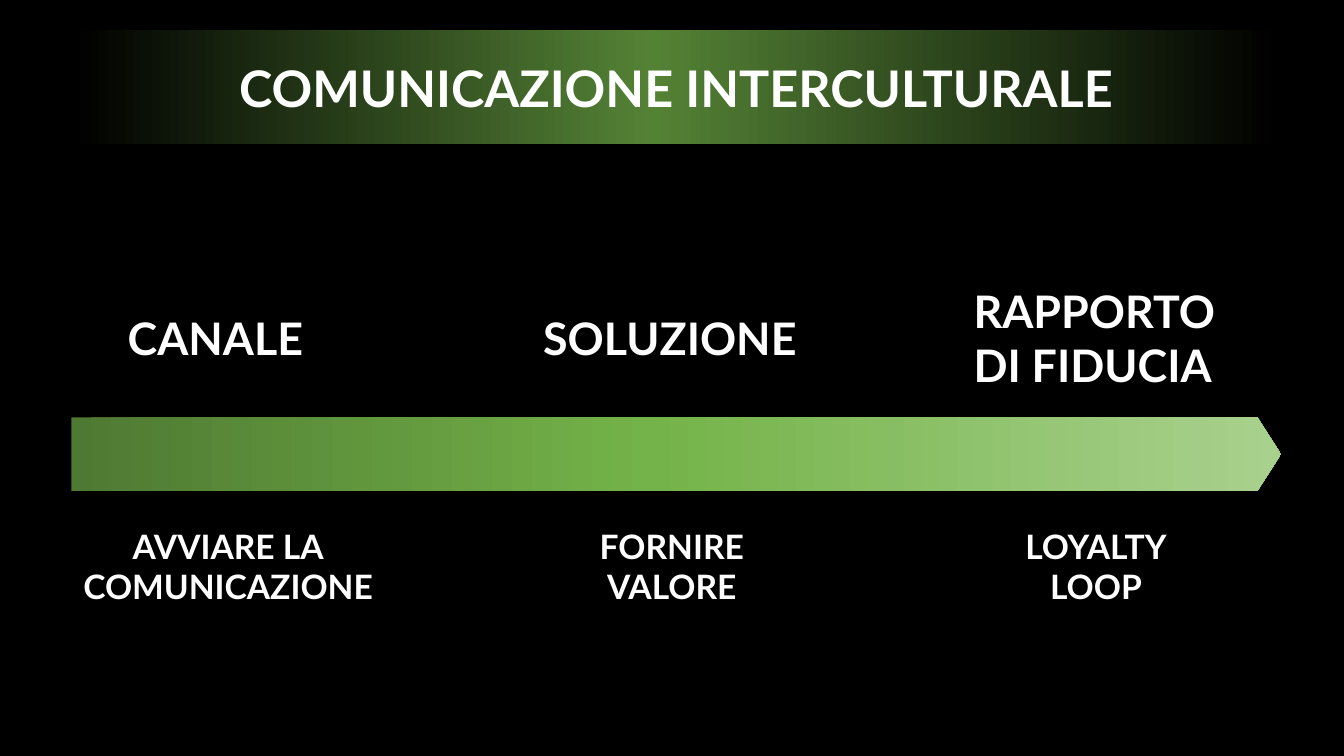
from copy import deepcopy

from pptx import Presentation
from pptx.dml.color import RGBColor
from pptx.enum.shapes import MSO_SHAPE as Preset
from pptx.enum.text import MSO_ANCHOR as Anchor, MSO_AUTO_SIZE as AutoSize, PP_ALIGN as Align
from pptx.oxml.ns import qn
from pptx.util import Cm, Pt

# Content: each text has its lines, centre and width in cm
TITLE = ["COMUNICAZIONE INTERCULTURALE"]
STAGES = [
    (["CANALE"], 5.46, 4.98),
    (["SOLUZIONE"], 16.93, 6.98),
    (["RAPPORTO", "DI FIDUCIA"], 27.64, 6.71),
]
GOALS = [
    (["AVVIARE LA", "COMUNICAZIONE"], 5.75, 7.9),
    (["FORNIRE", "VALORE"], 16.93, 4.19),
    (["LOYALTY", "LOOP"], 27.62, 4.29),
]
BANNER_STOPS = [(0, "000000"), (0.48, "548235"), (1, "000000")]
ARROW_STOPS = [(0, "4E7932"), (0.48, "74B349"), (1, "A9D18E")]

# Layout in cm
LEFT, WIDTH = 1.8, 30.48
BANNER_TOP, BANNER_HEIGHT = 0.76, 2.87
ARROW_TOP, ARROW_HEIGHT = 10.52, 1.85
STAGE_MIDDLE, STAGE_LINE = 8.53, 1.37
GOAL_TOP, GOAL_HEIGHT = 13.13, 2.31
PADDING = 0.26


def color(value):
    return RGBColor.from_string(value)


def write(frame, lines, *, size, align=Align.LEFT, anchor=Anchor.TOP, wrap=False):
    frame.word_wrap = wrap
    frame.vertical_anchor = anchor
    for i, line in enumerate(lines):
        paragraph = frame.paragraphs[0] if i == 0 else frame.add_paragraph()
        paragraph.alignment = align
        run = paragraph.add_run()
        run.text = line
        run.font.name = "Lato"
        run.font.size = Pt(size)
        run.font.bold = True
        run.font.color.rgb = color("FFFFFF")


def add_label(lines, center, width, top, height, **text_format):
    label = slide.shapes.add_textbox(Cm(center - width / 2), Cm(top), Cm(width), Cm(height))
    write(label.text_frame, lines, **text_format)
    label.text_frame.auto_size = AutoSize.SHAPE_TO_FIT_TEXT


def add_band(preset, top, height, stops):
    band = slide.shapes.add_shape(preset, Cm(LEFT), Cm(top), Cm(WIDTH), Cm(height))
    band.shadow.inherit = False
    band.line.fill.background()
    band.fill.gradient()
    band.fill.gradient_angle = 0
    # The default gradient has two stops; add the third
    stop_list = band.element.spPr.find(qn("a:gradFill")).find(qn("a:gsLst"))
    stop_list.append(deepcopy(stop_list[-1]))
    for stop, (position, value) in zip(band.fill.gradient_stops, stops):
        stop.position = position
        stop.color.rgb = color(value)
    return band


prs = Presentation()
prs.slide_width, prs.slide_height = Cm(33.87), Cm(19.05)
slide = prs.slides.add_slide(prs.slide_layouts[6])
slide.background.fill.solid()
slide.background.fill.fore_color.rgb = color("000000")

# Timeline arrow
arrow = add_band(Preset.PENTAGON, ARROW_TOP, ARROW_HEIGHT, ARROW_STOPS)
arrow.adjustments[0] = 0.32

# Stages above the arrow, centred on one line
for lines, center, width in STAGES:
    height = len(lines) * STAGE_LINE + PADDING
    add_label(lines, center, width, STAGE_MIDDLE - height / 2, height, size=32)

# Goals below the arrow
for lines, center, width in GOALS:
    add_label(lines, center, width, GOAL_TOP, GOAL_HEIGHT, size=24, align=Align.CENTER)

# Title banner
banner = add_band(Preset.RECTANGLE, BANNER_TOP, BANNER_HEIGHT, BANNER_STOPS)
write(banner.text_frame, TITLE, size=36, align=Align.CENTER, anchor=Anchor.MIDDLE, wrap=True)

prs.save("out.pptx")
